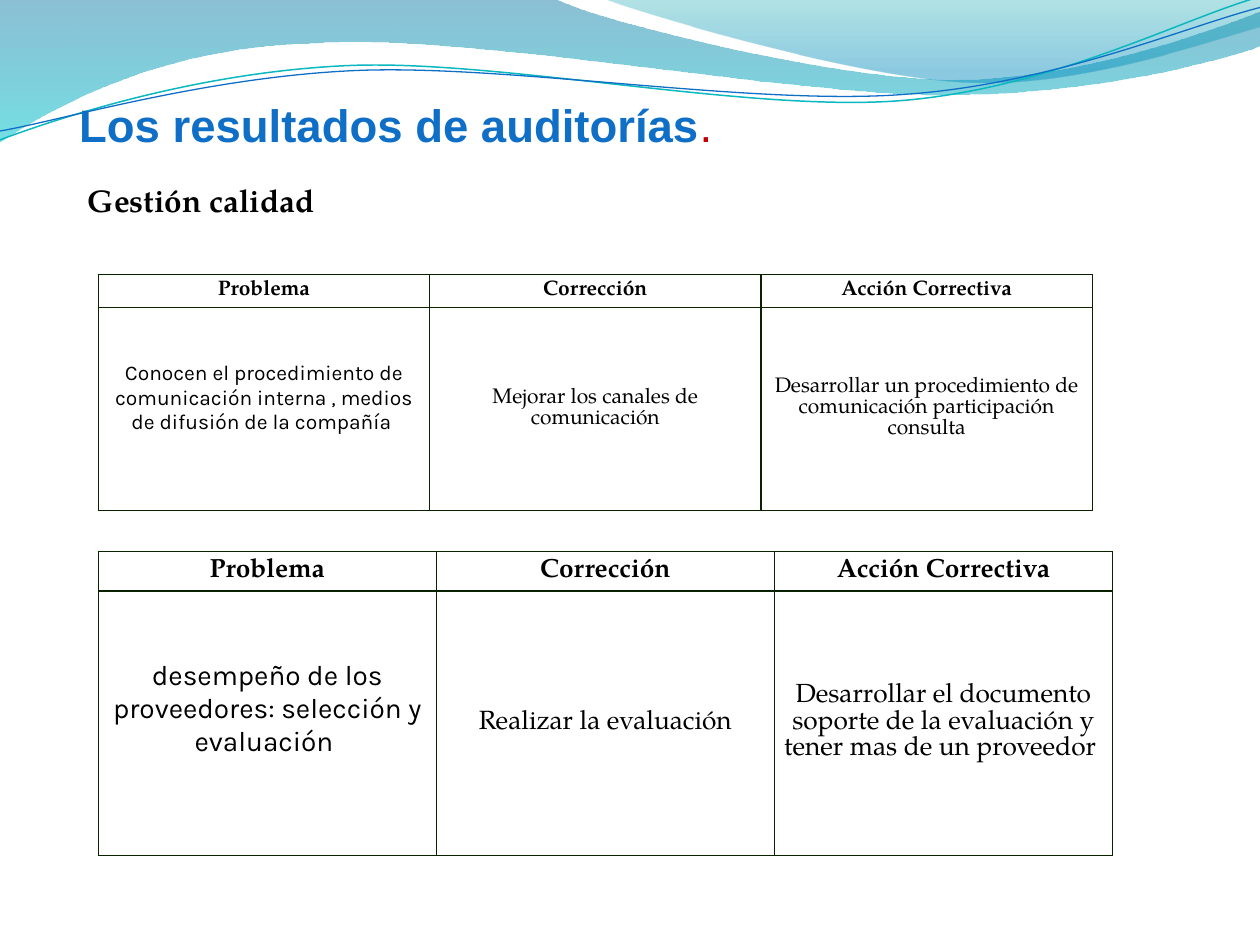
"""Build the slide of audit results with two corrective-action tables."""
import math
import pptx
import pptx.util
import pptx.dml.color
import pptx.enum.text
import pptx.oxml
import pptx.oxml.ns

Inches, Pt = pptx.util.Inches, pptx.util.Pt
RGB = pptx.dml.color.RGBColor
ALIGN, ANCHOR = pptx.enum.text.PP_ALIGN, pptx.enum.text.MSO_ANCHOR
qn, NS = pptx.oxml.ns.qn, pptx.oxml.ns.nsdecls("a")

BLACK = RGB(0, 0, 0)
BLUE = RGB(0x0F, 0x6F, 0xC6)
RED = RGB(0xC0, 0, 0)
TEAL = RGB(0x0A, 0xB8, 0xBF)
DEEP_BLUE, CYAN = RGB(0, 0x74, 0xA1), RGB(0, 0xC6, 0xCF)
SEA, SKY = RGB(0, 0xA1, 0xA9), RGB(0, 0x8B, 0xBF)
BORDER = RGB(0x0B, 0x22, 0)
SERIF, SANS, TITLE_FONT = "TeX Gyre Pagella", "Karla", "Arial"

BANDS = [
    ([(0, 0), (4.4, -0.01), (4.76, 0.17, 6.64, 0.63, 7.58, 0.63),
      (8.53, 0.63, 9.58, 0.26, 10, 0.09), (10.01, 0.36),
      (9.83, 0.44, 8.7, 0.76, 7.46, 0.75), (6.22, 0.75, 3.82, 0.28, 2.57, 0.34),
      (1.29, 0.36, 0.46, 0.83, -0.01, 1.13), (0, 0)],
     [(0, DEEP_BLUE, 45), (1, CYAN, 55)]),
    ([(4.79, -0.01), (5.09, 0.11, 6.82, 0.62, 7.69, 0.65),
      (8.56, 0.69, 9.61, 0.32, 10, 0.21), (10, 0), (4.79, -0.01)],
     [(0, SEA, 30), (0.8, SKY, 45)]),
]
WAVES = [
    ([(0, 1.11), (0.48, 0.93, 1.58, 0.57, 2.77, 0.52),
      (3.95, 0.47, 5.93, 0.89, 7.13, 0.8), (8.33, 0.71, 9.38, 0.15, 9.98, -0.02)],
     (4.99, 0.58), TEAL, 0.85),
    ([(0, 1.04), (0.47, 0.96, 1.64, 0.61, 2.83, 0.56),
      (4.03, 0.51, 5.97, 0.84, 7.17, 0.75), (8.36, 0.67, 9.41, 0.21, 10, 0.06)],
     (5, 0.59), BLUE, 0.75),
]
WAVE_TILT = 2.7
TEXTS = [
    ((0.53, 0.72, 9, 0.55),
     [("Los resultados de auditorías", TITLE_FONT, 26, BLUE, True),
      (".", TITLE_FONT, 26, RED, False)]),
    ((0.6, 1.39, 3.36, 0.4),
     [("Gestión calidad", SERIF, 18, BLACK, True)]),
]
HEADERS = ["Problema", "Corrección", "Acción Correctiva"]
TABLES = [
    {"top": 4.38, "width": 8.05, "rows": (0.31, 2.1), "size": 15, "sans_size": 16, "lift": 0.22,
     "body": ["desempeño de los proveedores: selección y evaluación ",
              "Realizar la evaluación",
              "Desarrollar el documento soporte de la evaluación y tener mas de un proveedor "]},
    {"top": 2.18, "width": 7.89, "rows": (0.25, 1.61), "size": 12, "sans_size": 12, "lift": 0.17,
     "body": ["Conocen el procedimiento de comunicación interna , medios de difusión de la compañía ",
              "Mejorar los canales de comunicación",
              "Desarrollar un procedimiento de comunicación participación consulta"]},
]
TABLE_LEFT, INSET = 0.78, 0.03


def add_run(p, text, font, size, color, bold):
    r = p.add_run()
    r.text = text
    r.font.name, r.font.size, r.font.bold = font, Pt(size), bold
    r.font.color.rgb = color


def turn(seg, center, degrees):
    cx, cy = center
    c, n = math.cos(math.radians(degrees)), math.sin(math.radians(degrees))
    out = []
    for x, y in zip(seg[::2], seg[1::2]):
        out += [cx + (x - cx) * c - (y - cy) * n, cy + (x - cx) * n + (y - cy) * c]
    return tuple(out)


def add_outline(s, path, close):
    points = [(Inches(x), Inches(y)) for seg in path for x, y in zip(seg[::2], seg[1::2])]
    fb = s.shapes.build_freeform(*points[0])
    fb.add_line_segments(points[1:], close=close)
    sp = fb.convert_to_shape()
    sp.shadow.inherit = False
    lines = iter(list(sp.element.spPr.iter(qn("a:lnTo"))))
    for seg in path[1:]:
        first = next(lines)
        if len(seg) == 6:
            curve = pptx.oxml.parse_xml(f"<a:cubicBezTo {NS}/>")
            first.addprevious(curve)
            for line in (first, next(lines), next(lines)):
                curve.append(line[0])
                line.getparent().remove(line)
    return sp


def add_band(s, path, stops):
    sp = add_outline(s, path, True)
    sp.line.fill.background()
    sp.fill.gradient()
    sp.fill.gradient_angle = 270
    for stop, (position, color, _) in zip(sp.fill.gradient_stops, stops):
        stop.position, stop.color.rgb = position, color
    for clr, (_, _, opacity) in zip(sp.element.spPr.iter(qn("a:srgbClr")), stops):
        clr.append(pptx.oxml.parse_xml(f'<a:alpha {NS} val="{opacity * 1000}"/>'))


def add_wave(s, path, center, color, width):
    sp = add_outline(s, [turn(seg, center, WAVE_TILT) for seg in path], False)
    sp.rotation = 360 - WAVE_TILT
    sp.fill.background()
    sp.line.color.rgb, sp.line.width = color, Pt(width)


def add_text(s, box, runs):
    tf = s.shapes.add_textbox(*map(Inches, box)).text_frame
    tf.word_wrap = True
    for run in runs:
        add_run(tf.paragraphs[0], *run)


def style_cell(cell, bottom):
    cell.margin_left = cell.margin_right = cell.margin_top = Inches(INSET)
    cell.margin_bottom = Inches(bottom)
    cell.vertical_anchor = ANCHOR.MIDDLE
    cell.fill.background()
    tcPr = cell._tc.get_or_add_tcPr()
    for i, side in enumerate("LRTB"):
        tcPr.insert(i, pptx.oxml.parse_xml(
            f'<a:ln{side} {NS} w="{Pt(0.75)}"><a:solidFill>'
            f'<a:srgbClr val="{BORDER}"/></a:solidFill></a:ln{side}>'))


def add_action_table(s, top, width, rows, size, sans_size, lift, body):
    n = len(HEADERS)
    table = s.shapes.add_table(len(rows), n, Inches(TABLE_LEFT), Inches(top),
                               Inches(width), Inches(sum(rows))).table
    table.first_row = table.horz_banding = False
    for i, (height, texts) in enumerate(zip(rows, (HEADERS, body))):
        table.rows[i].height = Inches(height)
        for j, text in enumerate(texts):
            sans = i == 1 and j == 0
            cell = table.cell(i, j)
            style_cell(cell, INSET + lift if sans else INSET)
            p = cell.text_frame.paragraphs[0]
            p.alignment = ALIGN.CENTER
            add_run(p, text, SANS if sans else SERIF, sans_size if sans else size, BLACK, i == 0)


def main():
    prs = pptx.Presentation()
    prs.slide_width, prs.slide_height = Inches(10), Inches(7.5)
    s = prs.slides.add_slide(prs.slide_layouts[6])
    for band in BANDS:
        add_band(s, *band)
    for wave in WAVES:
        add_wave(s, *wave)
    for text in TEXTS:
        add_text(s, *text)
    for action_table in TABLES:
        add_action_table(s, **action_table)
    prs.save("out.pptx")


if __name__ == "__main__":
    main()
